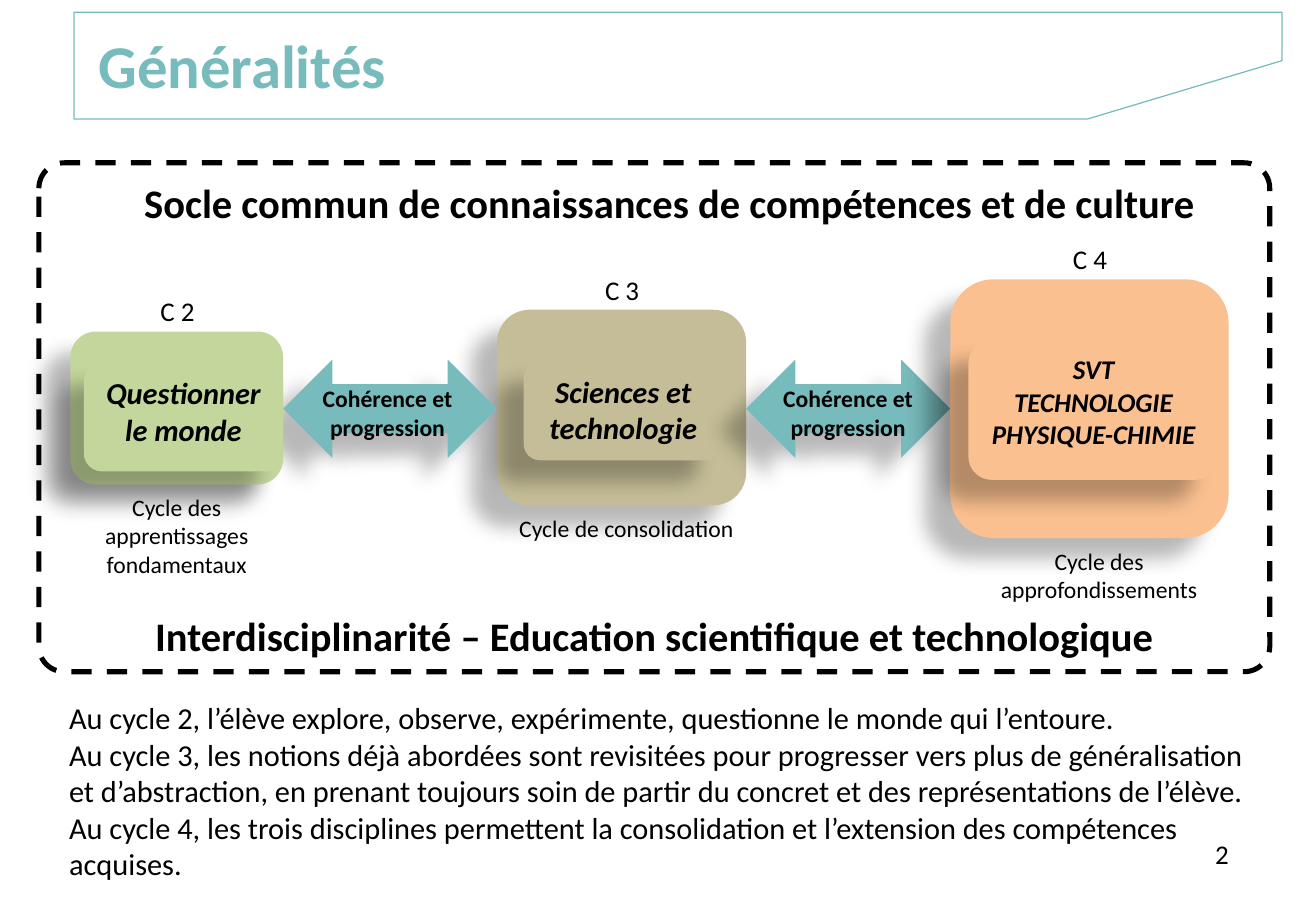
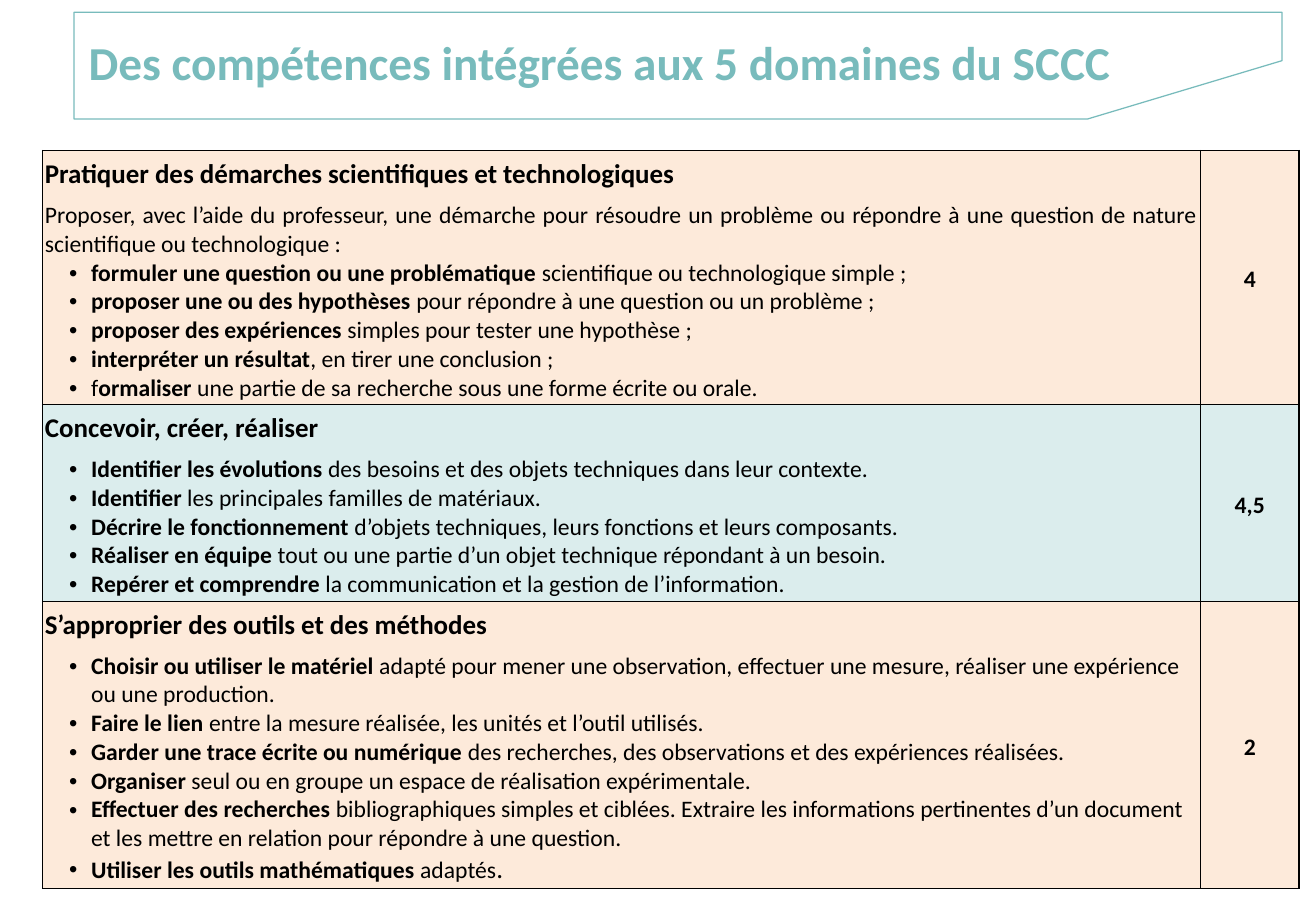
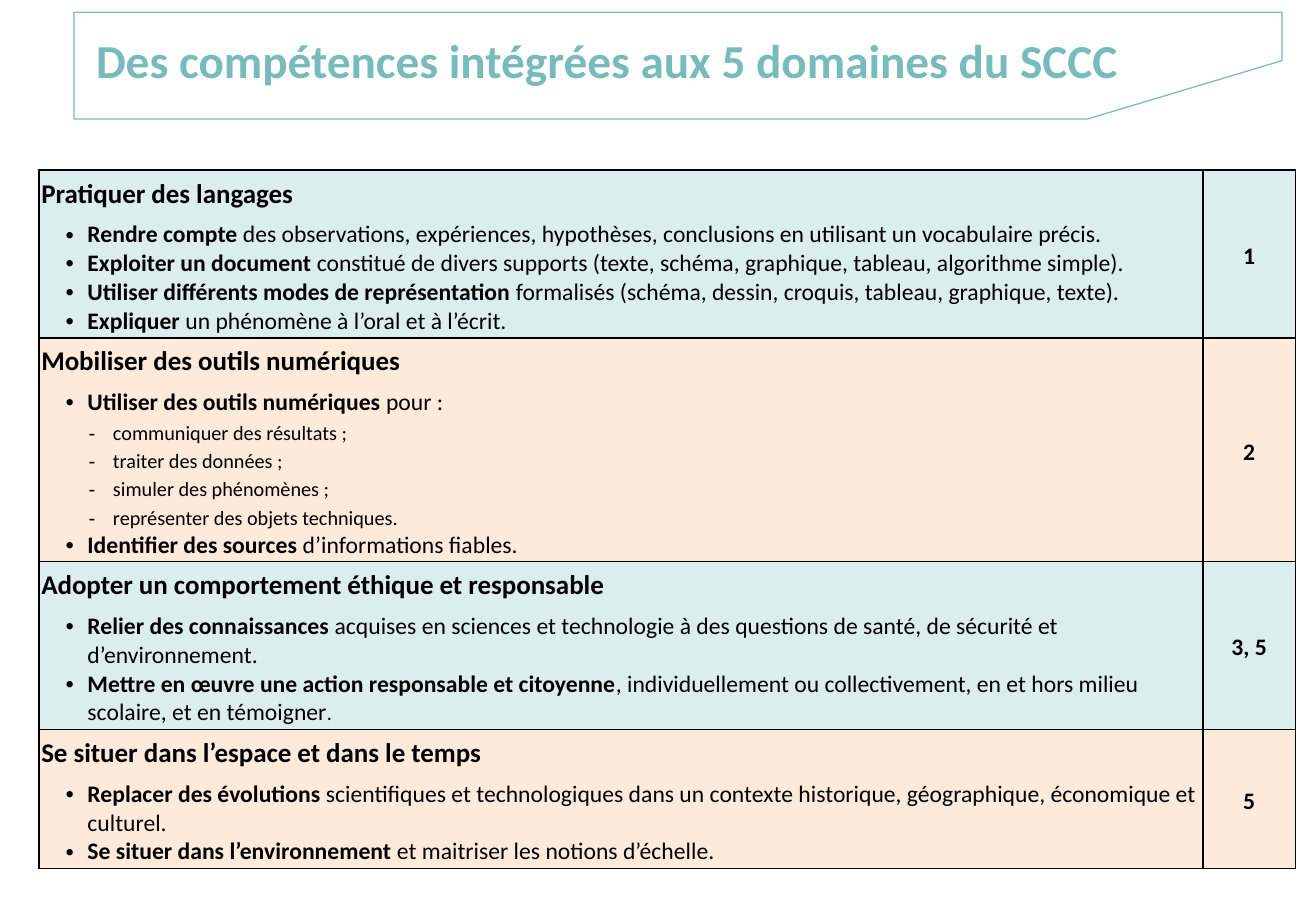
from lxml import etree
from pptx import Presentation
from pptx.dml.color import RGBColor
from pptx.enum.dml import MSO_LINE
from pptx.enum.shapes import MSO_SHAPE as Preset
from pptx.enum.text import MSO_ANCHOR as Anchor, MSO_AUTO_SIZE as AutoSize, PP_ALIGN as Align
from pptx.oxml.ns import qn
from pptx.util import Inches, Pt

COLORS = {
    "teal": "78BBBC", "black": "000000",
    "green": "C3D69B", "khaki": "C4BD97", "orange": "FAC090",
    "pale orange": "FDEADA", "pale teal": "DBEDED",
}
FONT = "Calibri"
MARGIN_SIDES = ("left", "top", "right", "bottom")

# Paragraph styles of the skill tables
STYLES = {
    "heading": {"size": 16, "bold": True, "line_spacing": 1.15, "space_after": Pt(6)},
    "intro": {"size": 14, "alignment": Align.JUSTIFY},
    "bullet": {"size": 14, "marker": "•", "left": 0.38, "hanging": 0.18},
    "dash": {"size": 12, "marker": "-", "left": 0.59, "hanging": 0.2, "line_spacing": 1.15},
    "domain": {"size": 14, "bold": True, "alignment": Align.CENTER,
               "line_spacing": 1.15, "space_after": Pt(10)},
}

# Rows: heading, lines (style, text with *bold* parts, size of the final stop), domain, height
PRACTICE_ROWS = [
    ("Pratiquer des démarches scientifiques et technologiques", [
        ("intro", "Proposer, avec l’aide du professeur, une démarche pour résoudre un problème ou "
                  "répondre à une question de nature scientifique ou technologique :"),
        ("bullet", "*formuler une question ou une problématique *scientifique ou technologique simple ;"),
        ("bullet", "*proposer une ou des hypothèses *pour répondre à une question ou un problème ;"),
        ("bullet", "*proposer des expériences *simples pour tester une hypothèse ;"),
        ("bullet", "*interpréter un résultat*, en tirer une conclusion ;"),
        ("bullet", "f*ormaliser *une partie de sa recherche sous une forme écrite ou orale."),
    ], "4", 2.05),
    ("Concevoir, créer, réaliser", [
        ("bullet", "*Identifier les évolutions *des besoins et des objets techniques dans leur contexte."),
        ("bullet", "*Identifier *les principales familles de matériaux."),
        ("bullet", "*Décrire le fonctionnement *d’objets techniques, leurs fonctions et leurs composants."),
        ("bullet", "*Réaliser en équipe *tout ou une partie d’un objet technique répondant à un besoin."),
        ("bullet", "*Repérer et comprendre *la communication et la gestion de l’information."),
    ], "4,5", 1.58),
    ("S’approprier des outils et des méthodes", [
        ("bullet", "*Choisir ou utiliser le matériel *adapté pour mener une observation, effectuer une "
                   "mesure, réaliser une expérience ou une production."),
        ("bullet", "*Faire le lien *entre la mesure réalisée, les unités et l’outil utilisés."),
        ("bullet", "*Garder une trace écrite ou numérique *des recherches, des observations et des "
                   "expériences réalisées."),
        ("bullet", "*Organiser* seul ou en groupe un espace de réalisation expérimentale."),
        ("bullet", "*Effectuer des recherches *bibliographiques simples et ciblées. Extraire les "
                   "informations pertinentes d’un document et les mettre en relation pour répondre "
                   "à une question."),
        ("bullet", "*Utiliser les outils mathématiques *adaptés.", 16),
    ], "2", 2.32),
]
LANGUAGE_ROWS = [
    ("Pratiquer des langages", [
        ("bullet", "*Rendre compte* des observations, expériences, hypothèses, conclusions en "
                   "utilisant un vocabulaire précis."),
        ("bullet", "*Exploiter un document *constitué de divers supports (texte, schéma, graphique, "
                   "tableau, algorithme simple)."),
        ("bullet", "*Utiliser différents modes de représentation *formalisés (schéma, dessin, croquis, "
                   "tableau, graphique, texte)."),
        ("bullet", "*Expliquer* un phénomène à l’oral et à l’écrit."),
    ], "1", 1.35),
    ("Mobiliser des outils numériques", [
        ("bullet", "*Utiliser des outils numériques *pour :"),
        ("dash", "communiquer des résultats ;"),
        ("dash", "traiter des données ;"),
        ("dash", "simuler des phénomènes ;"),
        ("dash", "représenter des objets techniques."),
        ("bullet", "*Identifier des sources *d’informations fiables."),
    ], "2", 1.81),
    ("Adopter un comportement éthique et responsable", [
        ("bullet", "*Relier des connaissances *acquises en sciences et technologie à des questions de "
                   "santé, de sécurité et d’environnement."),
        ("bullet", "*Mettre en œuvre une action responsable et citoyenne*, individuellement ou "
                   "collectivement, en et hors milieu scolaire, et en témoigner.", 12),
    ], "3, 5", 1.35),
    ("Se situer dans l’espace et dans le temps", [
        ("bullet", "*Replacer des évolutions* scientifiques et technologiques dans un contexte "
                   "historique, géographique, économique et culturel."),
        ("bullet", "*Se situer dans l’environnement *et maitriser les notions d’échelle."),
    ], "5", 1.13),
]
SUMMARY = [
    "Au cycle 2, l’élève explore, observe, expérimente, questionne le monde qui l’entoure.",
    "Au cycle 3, les notions déjà abordées sont revisitées pour progresser vers plus de "
    "généralisation et d’abstraction, en prenant toujours soin de partir du concret et des "
    "représentations de l’élève.",
    "Au cycle 4, les trois disciplines permettent la consolidation et l’extension des "
    "compétences acquises.",
]


def rgb(name):
    return RGBColor.from_string(COLORS[name])


def inches(box):
    return [Inches(length) for length in box]


def add_run(paragraph, text, size, color="black", **formats):
    run = paragraph.add_run()
    run.text = text
    run.font.color.rgb = rgb(color)
    for name, value in {"name": FONT, "size": Pt(size), **formats}.items():
        setattr(run.font, name, value)


def set_margins(target, margins):
    for side, margin in zip(MARGIN_SIDES, margins):
        setattr(target, f"margin_{side}", Inches(margin))


def write(shape, lines, size, align=Align.CENTER, anchor=Anchor.TOP,
          margins=(0.1, 0.05, 0.1, 0.05), spacing=None, **formats):
    frame = shape.text_frame
    frame.auto_size = AutoSize.NONE
    frame.word_wrap = True
    frame.vertical_anchor = anchor
    set_margins(frame, margins)
    for number, line in enumerate(lines):
        paragraph = frame.add_paragraph() if number else frame.paragraphs[0]
        paragraph.alignment = align
        paragraph.line_spacing = spacing
        add_run(paragraph, line, size, **formats)


def add_label(shapes, box, lines, size, **formats):
    write(shapes.add_textbox(*inches(box)), lines, size, **formats)


def add_shadow(shape):
    effects = etree.SubElement(shape.element.spPr, qn("a:effectLst"))
    shadow = etree.SubElement(effects, qn("a:outerShdw"), blurRad="149987", dist="250190",
                              dir="8460000", algn="ctr", rotWithShape="0")
    color = etree.SubElement(shadow, qn("a:srgbClr"), val=COLORS["black"])
    etree.SubElement(color, qn("a:alpha"), val="28000")


def add_block(shapes, preset, box, fill):
    block = shapes.add_shape(preset, *inches(box))
    block.fill.solid()
    block.fill.fore_color.rgb = rgb(fill)
    block.line.fill.background()
    add_shadow(block)
    return block


def add_title_band(slide):
    """Draw the cut-corner band and move it to the layout that all slides share."""
    builder = slide.shapes.build_freeform(Inches(10.55), Inches(0.1))
    corners = [(0.61, 0.1), (0.61, 0.98), (8.95, 0.98), (10.55, 0.5)]
    builder.add_line_segments([inches(corner) for corner in corners], close=True)
    band = builder.convert_to_shape()
    band.shadow.inherit = False
    band.fill.background()
    band.line.color.rgb = rgb("teal")
    band.line.width = Pt(0.75)
    band.element.nvSpPr.cNvPr.set("id", "20")
    slide.slide_layout.shapes.element.insert(2, band.element)


def set_title(slide, box, text, size):
    title = slide.shapes.title
    title.left, title.top, title.width, title.height = inches(box)
    write(title, [text], size, align=Align.LEFT, margins=(0.12, 0.06, 0.12, 0.06),
          color="teal", bold=True)


def add_cycle(slide, box, fill, name, subject, subject_box, subject_size, caption,
              caption_width, caption_shift=0):
    """Place one cycle; the subject box is relative to the corner of the cycle box."""
    left, top, width, height = box
    middle = left + width / 2
    shapes = slide.shapes.add_group_shape().shapes
    add_block(shapes, Preset.ROUNDED_RECTANGLE, box, fill)
    dx, dy, subject_width, subject_height = subject_box
    subject_block = add_block(shapes, Preset.ROUNDED_RECTANGLE,
                              (left + dx, top + dy, subject_width, subject_height), fill)
    write(subject_block, subject, subject_size, bold=True, italic=True)
    add_label(shapes, (middle - 0.63, top - 0.35, 1.27, 0.37), [name], 16)
    caption_left = middle - caption_width / 2 + caption_shift
    add_label(shapes, (caption_left, top + height + 0.02, caption_width, 0.8), [caption], 14)


def add_link(slide, box, left_margin):
    arrow = add_block(slide.shapes, Preset.LEFT_RIGHT_ARROW, box, "teal")
    write(arrow, ["Cohérence et progression"], 14, margins=(left_margin, 0, 0.04, 0.05), bold=True)


def add_framework(slide, box):
    """Dashed frame with its headings and the three linked cycles."""
    left, top, width, height = box
    frame = slide.shapes.add_shape(Preset.ROUNDED_RECTANGLE, *inches(box))
    frame.adjustments[0] = 0.05
    frame.shadow.inherit = False
    frame.fill.background()
    frame.line.color.rgb = rgb("black")
    frame.line.width = Pt(3)
    frame.line.dash_style = MSO_LINE.DASH

    heading = {"anchor": Anchor.MIDDLE, "margins": (0.02,) * 4, "spacing": 0.9, "bold": True}
    add_label(slide.shapes, (left + 0.19, top, 10, 0.7),
              ["Socle commun de connaissances de compétences et de culture"], 24, **heading)
    add_label(slide.shapes, (left + 0.42, top + height - 0.72, 9.29, 0.9),
              ["Interdisciplinarité – Education scientifique et technologique"], 24, **heading)

    # The order keeps the last cycles' shadows above the arrows
    add_cycle(slide, (left + 3.77, top + 1.21, 2.05, 1.61), "khaki", "C 3",
              ["Sciences et technologie"], (0.22, 0.43, 1.64, 0.81), 18,
              "Cycle de consolidation", 1.97, 0.04)
    add_link(slide, (left + 2.01, top + 1.62, 1.76, 0.81), 0)
    add_link(slide, (left + 5.82, top + 1.62, 1.68, 0.81), 0.04)
    add_cycle(slide, (left + 0.26, top + 1.39, 1.75, 1.26), "green", "C 2",
              ["Questionner le monde"], (0.11, 0.26, 1.64, 0.89), 18,
              "Cycle des apprentissages fondamentaux", 1.97)
    add_cycle(slide, (left + 7.5, top + 0.96, 2.29, 2.13), "orange", "C 4",
              ["SVT", "TECHNOLOGIE", "PHYSIQUE-CHIMIE"], (0.15, 0.5, 2.06, 1.15), 16,
              "Cycle des approfondissements", 2.29, 0.08)


def add_styled_line(paragraph, style, text, stop_size=None):
    form = STYLES[style]
    for name in ("alignment", "line_spacing", "space_after"):
        if name in form:
            setattr(paragraph, name, form[name])
    if "marker" in form:
        properties = paragraph._p.get_or_add_pPr()
        properties.set("marL", str(Inches(form["left"])))
        properties.set("indent", str(-Inches(form["hanging"])))
        etree.SubElement(properties, qn("a:buFont"), typeface="Arial")
        etree.SubElement(properties, qn("a:buChar"), char=form["marker"])
    body = text[:-1] if stop_size else text
    for number, part in enumerate(body.split("*")):
        if part:
            add_run(paragraph, part, form["size"], bold=form.get("bold", number % 2 == 1))
    if stop_size:
        add_run(paragraph, text[-1], stop_size, bold=False)


def fill_cell(cell, lines, fill, anchor):
    set_margins(cell, (0.02,) * 4)
    cell.vertical_anchor = anchor
    cell.fill.solid()
    cell.fill.fore_color.rgb = rgb(fill)
    properties = cell._tc.get_or_add_tcPr()
    for place, side in enumerate(("lnL", "lnR", "lnT", "lnB")):
        border = etree.Element(qn(f"a:{side}"), w=str(Pt(1)))
        paint = etree.SubElement(border, qn("a:solidFill"))
        etree.SubElement(paint, qn("a:srgbClr"), val=COLORS["black"])
        properties.insert(place, border)
    for number, line in enumerate(lines):
        frame = cell.text_frame
        add_styled_line(frame.add_paragraph() if number else frame.paragraphs[0], *line)


def add_skill_table(slide, left, top, widths, rows, fills):
    heights = [row[-1] for row in rows]
    table = slide.shapes.add_table(len(rows), 2, *inches((left, top, sum(widths), sum(heights)))).table
    table.first_row = table.horz_banding = False
    for column, width in zip(table.columns, widths):
        column.width = Inches(width)
    for number, (heading, lines, domain, height) in enumerate(rows):
        table.rows[number].height = Inches(height)
        fill = fills[number % 2]
        fill_cell(table.cell(number, 0), [("heading", heading), *lines], fill, Anchor.TOP)
        fill_cell(table.cell(number, 1), [("domain", domain)], fill, Anchor.MIDDLE)


def main():
    deck = Presentation()
    deck.slide_width, deck.slide_height = inches((10.83, 7.5))
    overview, practices, languages = [deck.slides.add_slide(deck.slide_layouts[5]) for _ in range(3)]
    add_title_band(overview)

    # Overview of the cycles
    set_title(overview, (0.69, 0.17, 8.35, 0.72), "Généralités", 36)
    add_framework(overview, (0.32, 1.34, 10.13, 4.19))
    add_label(overview.shapes, (0.47, 5.71, 9.99, 1.62), SUMMARY, 18, align=Align.LEFT)
    add_label(overview.shapes, (9.5, 6.85, 1.11, 0.5), ["2"], 16)

    # Skills and their domains
    skills_title = "Des compétences intégrées aux 5 domaines du SCCC"
    set_title(practices, (0.61, 0.21, 9.02, 0.59), skills_title, 28)
    add_skill_table(practices, 0.35, 1.24, (9.53, 0.81), PRACTICE_ROWS, ("pale orange", "pale teal"))
    set_title(languages, (0.67, 0.2, 9.85, 0.59), skills_title, 28)
    add_skill_table(languages, 0.32, 1.4, (9.58, 0.76), LANGUAGE_ROWS, ("pale teal", "pale orange"))

    deck.save("out.pptx")


if __name__ == "__main__":
    main()
